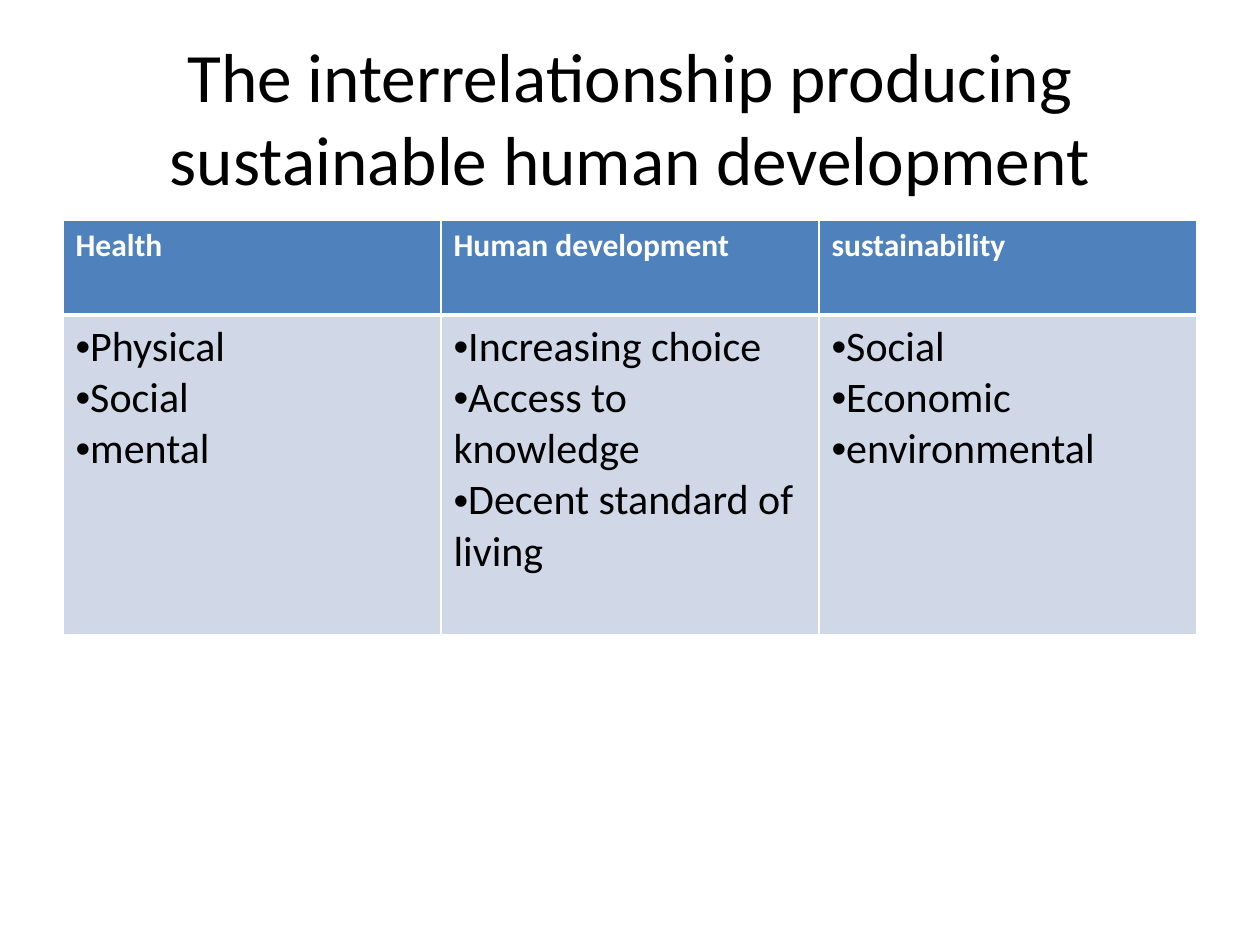
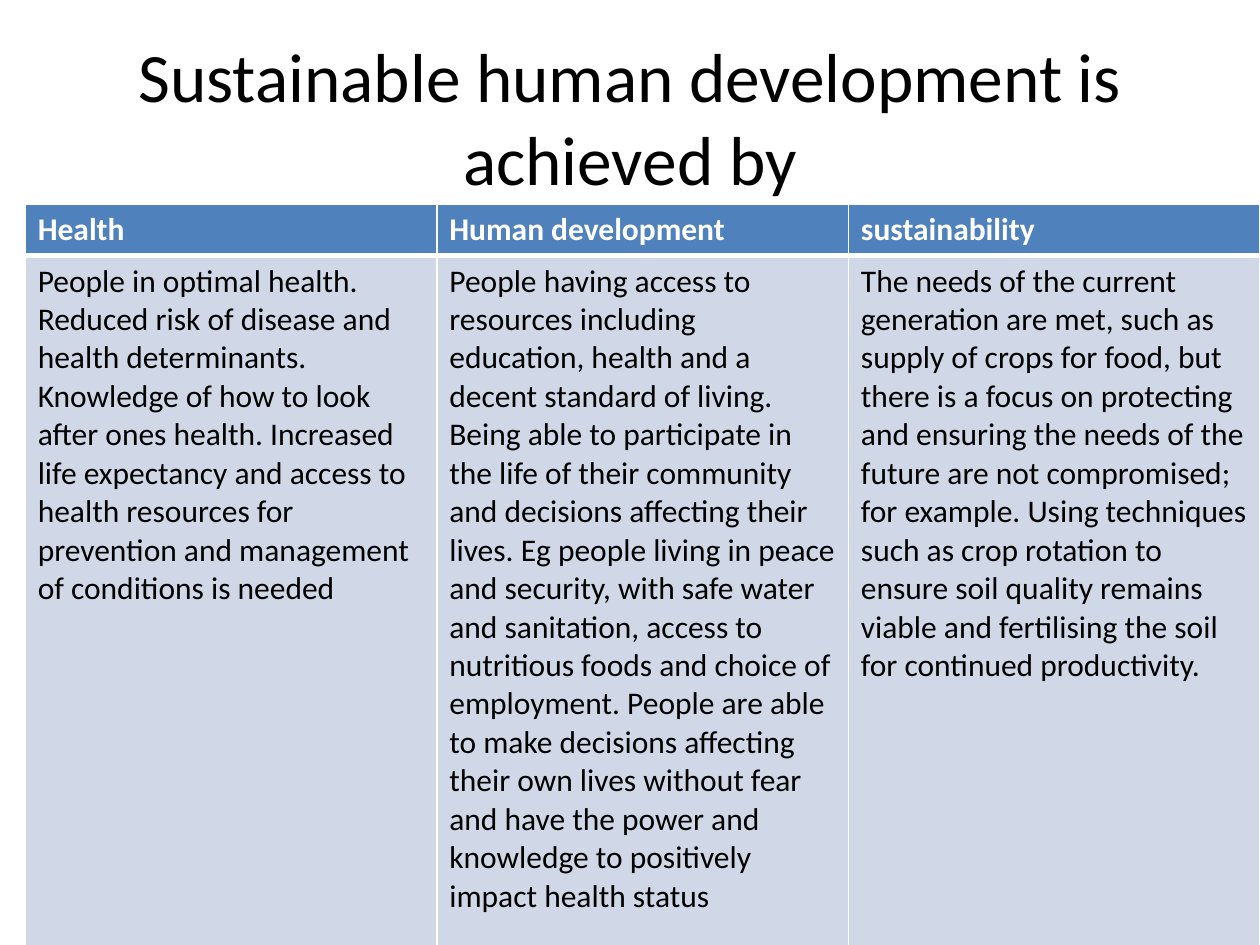
from dataclasses import dataclass

from lxml import etree
from pptx import Presentation
from pptx.dml.color import RGBColor
from pptx.enum.text import MSO_ANCHOR, PP_ALIGN
from pptx.oxml.ns import qn
from pptx.util import Inches, Pt

CENTER = PP_ALIGN.CENTER
MIDDLE = MSO_ANCHOR.MIDDLE
FONT = "Calibri"
BLACK = "000000"
WHITE = "FFFFFF"
HEADER_BLUE = "4F81BD"
BODY_BLUE = "D0D8E8"
THIN = 1
THICK = 3
BLANK_LAYOUT = 6
HEADINGS = ("Health", "Human development", "sustainability")


@dataclass(frozen=True)
class ColumnTable:
    left: float
    top: float
    width: float
    header_height: float
    body_height: float
    body_size: float
    bulleted: bool
    columns: tuple[tuple[str, ...], ...]


@dataclass(frozen=True)
class Page:
    title: str
    table: ColumnTable


PAGES = (
    Page(
        "The interrelationship producing sustainable human development",
        ColumnTable(0.5, 1.75, 9, 0.75, 2.54, 24, True, (
            ("Physical", "Social", "mental"),
            ("Increasing choice", "Access to knowledge", "Decent standard of living"),
            ("Social", "Economic", "environmental"),
        )),
    ),
    Page(
        "Sustainable human development is achieved by",
        ColumnTable(0.2, 1.62, 9.8, 0.41, 5.62, 18, False, (
            ("People in optimal health. Reduced risk of disease and health determinants. "
             "Knowledge of how to look after ones health. Increased life expectancy and "
             "access to health resources for prevention and management of conditions is "
             "needed",),
            ("People having access to resources including education, health and a decent "
             "standard of living.",
             "Being able to participate in the life of their community and decisions "
             "affecting their lives. Eg people living in peace and security, with safe "
             "water and sanitation, access to nutritious foods and choice of employment. "
             "People are able to make decisions affecting their own lives without fear "
             "and have the power and knowledge to positively impact health status"),
            ("The needs of the current generation are met, such as supply of crops for "
             "food, but there is a focus on protecting and ensuring the needs of the "
             "future are not compromised; for example. Using techniques such as crop "
             "rotation to ensure soil quality remains viable and fertilising the soil "
             "for continued productivity.",),
        )),
    ),
)


def rgb(value: str) -> RGBColor:
    return RGBColor.from_string(value)


def style_font(font, size: float, color: str, bold: bool = False) -> None:
    font.name = FONT
    font.size = Pt(size)
    font.bold = bold
    font.color.rgb = rgb(color)


def add_bullet(para) -> None:
    properties = para._p.get_or_add_pPr()
    properties.set("marL", "0")
    properties.set("indent", "0")
    etree.SubElement(properties, qn("a:buFont"), typeface="Arial")
    etree.SubElement(properties, qn("a:buChar"), char="•")


def set_borders(cell, top: float, bottom: float) -> None:
    properties = cell._tc.get_or_add_tcPr()
    widths = {"a:lnL": THIN, "a:lnR": THIN, "a:lnT": top, "a:lnB": bottom}
    for index, (tag, width) in enumerate(widths.items()):
        line = etree.Element(qn(tag), w=str(Pt(width)))
        fill = etree.SubElement(line, qn("a:solidFill"))
        etree.SubElement(fill, qn("a:srgbClr"), val=WHITE)
        properties.insert(index, line)


def fill_cell(cell, texts: tuple[str, ...], fill: str, size: float, color: str,
              bold: bool = False, bulleted: bool = False) -> None:
    cell.fill.solid()
    cell.fill.fore_color.rgb = rgb(fill)
    cell.text_frame.text = "\n".join(texts)
    for para in cell.text_frame.paragraphs:
        if bulleted:
            add_bullet(para)
        style_font(para.font, size, color, bold)


def add_title(slide, title: str) -> None:
    box = slide.shapes.add_textbox(Inches(0.5), Inches(0.3), Inches(9), Inches(1.25))
    frame = box.text_frame
    frame.word_wrap = True
    frame.vertical_anchor = MIDDLE
    para = frame.paragraphs[0]
    para.text = title
    para.alignment = CENTER
    style_font(para.font, 39.6, BLACK)


def add_column_table(slide, spec_table: ColumnTable) -> None:
    height = spec_table.header_height + spec_table.body_height
    table = slide.shapes.add_table(
        2, len(HEADINGS), Inches(spec_table.left), Inches(spec_table.top),
        Inches(spec_table.width), Inches(height)).table
    table.rows[0].height = Inches(spec_table.header_height)
    table.rows[1].height = Inches(spec_table.body_height)
    for column, (heading, texts) in enumerate(zip(HEADINGS, spec_table.columns)):
        header, body = table.cell(0, column), table.cell(1, column)
        fill_cell(header, (heading,), HEADER_BLUE, 18, WHITE, bold=True)
        set_borders(header, THIN, THICK)
        fill_cell(body, texts, BODY_BLUE, spec_table.body_size, BLACK,
                  bulleted=spec_table.bulleted)
        set_borders(body, THICK, THIN)


def main() -> None:
    deck = Presentation()
    deck.slide_width = Inches(10)
    deck.slide_height = Inches(7.5)
    for page in PAGES:
        slide = deck.slides.add_slide(deck.slide_layouts[BLANK_LAYOUT])
        add_title(slide, page.title)
        add_column_table(slide, page.table)
    deck.save("out.pptx")


if __name__ == "__main__":
    main()
